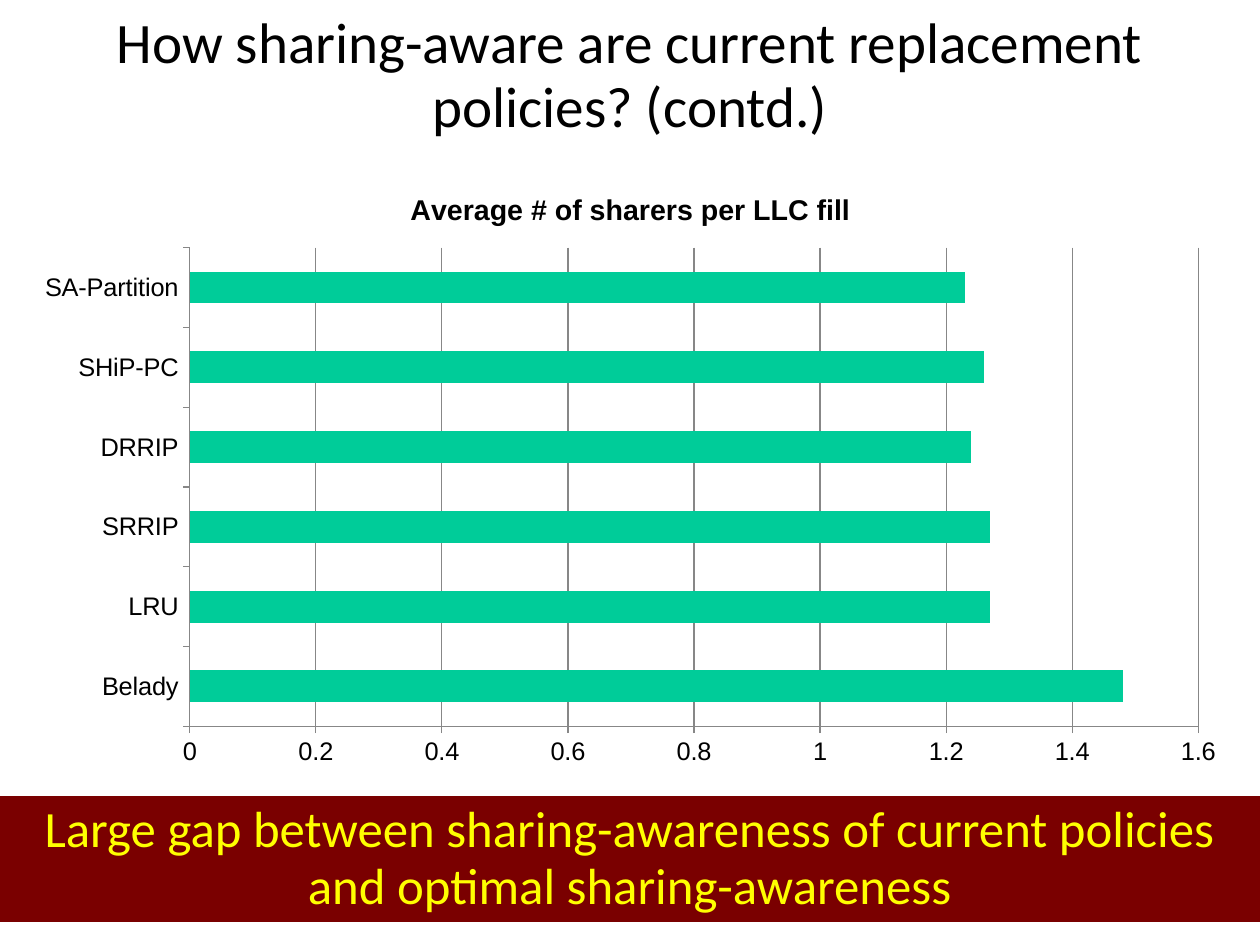
from pptx import Presentation
from pptx import util as u
from pptx.chart import data
from pptx.dml.color import RGBColor
from pptx.enum import chart as ch, shapes, text

COLORS = {"black": "000000", "maroon": "7A0000", "yellow": "FFFF00",
          "green": "00CC99", "grey": "878787"}
SHARERS = {"Belady": 1.48, "LRU": 1.27, "SRRIP": 1.27,
           "DRRIP": 1.24, "SHiP-PC": 1.26, "SA-Partition": 1.23}
WIDTH, HEIGHT = 793.7, 595.28


def color(name):
    """Return the named colour."""
    return RGBColor.from_string(COLORS[name])


def style(font, face, size, name, bold=False):
    """Set face, size, colour and weight of a font."""
    font.name, font.size, font.bold = face, u.Pt(size), bold
    font.color.rgb = color(name)


def place(shape, left, top, width, height):
    """Move and size a shape in points."""
    shape.left, shape.top = u.Pt(left), u.Pt(top)
    shape.width, shape.height = u.Pt(width), u.Pt(height)


def write(shape, words, size, name):
    """Fill a shape with one centred Calibri paragraph."""
    frame = shape.text_frame
    frame.text = words
    frame.word_wrap = True
    frame.auto_size = text.MSO_AUTO_SIZE.NONE
    frame.vertical_anchor = text.MSO_ANCHOR.MIDDLE
    para = frame.paragraphs[0]
    para.alignment = text.PP_ALIGN.CENTER
    para.line_spacing = 0.93
    style(para.runs[0].font, "Calibri", size, name)


def add_title(slide, words):
    """Format the title placeholder."""
    title = slide.shapes.title
    place(title, 39.6, 2.9, 714.2, 90.7)
    write(title, words, 36, "black")
    frame = title.text_frame
    frame.margin_left = frame.margin_right = 0
    frame.margin_top = frame.margin_bottom = 0


def add_banner(slide, words):
    """Add the full-width message band."""
    band = slide.shapes.add_shape(shapes.MSO_SHAPE.RECTANGLE, 0, 0, 0, 0)
    place(band, 0, 501.6, WIDTH, 79.2)
    band.shadow.inherit = False
    band.fill.solid()
    band.fill.fore_color.rgb = color("maroon")
    band.line.fill.background()
    write(band, words, 32, "yellow")


def format_line(line):
    """Make a thin grey line."""
    line.color.rgb = color("grey")
    line.width = u.Pt(0.75)


def format_axis(axis):
    """Give an axis its line, ticks and labels."""
    axis.major_tick_mark = ch.XL_TICK_MARK.OUTSIDE
    axis.minor_tick_mark = ch.XL_TICK_MARK.NONE
    format_line(axis.format.line)
    style(axis.tick_labels.font, "Arial", 16, "black")


def add_bars(slide, name, values):
    """Add the horizontal bar chart."""
    table = data.CategoryChartData()
    table.categories = list(values)
    table.add_series(name, list(values.values()))
    chart = slide.shapes.add_chart(
        ch.XL_CHART_TYPE.BAR_CLUSTERED, u.Pt(13), u.Pt(105.8),
        u.Pt(768.2), u.Pt(383.8), table).chart
    style(chart.font, "Arial", 10, "black")
    chart.has_legend = False
    chart.has_title = True
    title = chart.chart_title.text_frame
    title.text = name
    style(title.paragraphs[0].runs[0].font, "Arial", 18, "black", True)
    chart.chart_title.include_in_layout = False
    bars = chart.plots[0]
    bars.gap_width = 150
    bars.vary_by_categories = False
    fill = bars.series[0].format.fill
    fill.solid()
    fill.fore_color.rgb = color("green")
    format_axis(chart.category_axis)
    axis = chart.value_axis
    format_axis(axis)
    axis.minimum_scale, axis.maximum_scale, axis.major_unit = 0, 1.6, 0.2
    axis.tick_labels.number_format = "General"
    axis.tick_labels.number_format_is_linked = False
    axis.has_major_gridlines = True
    format_line(axis.major_gridlines.format.line)


def main():
    """Build and save the slide."""
    deck = Presentation()
    deck.slide_width, deck.slide_height = u.Pt(WIDTH), u.Pt(HEIGHT)
    slide = deck.slides.add_slide(deck.slide_layouts[5])
    add_title(slide, "How sharing-aware are current replacement policies? (contd.)")
    add_banner(slide, "Large gap between sharing-awareness of current policies "
                      "and optimal sharing-awareness")
    add_bars(slide, "Average # of sharers per LLC fill", SHARERS)
    deck.save("out.pptx")


if __name__ == "__main__":
    main()
